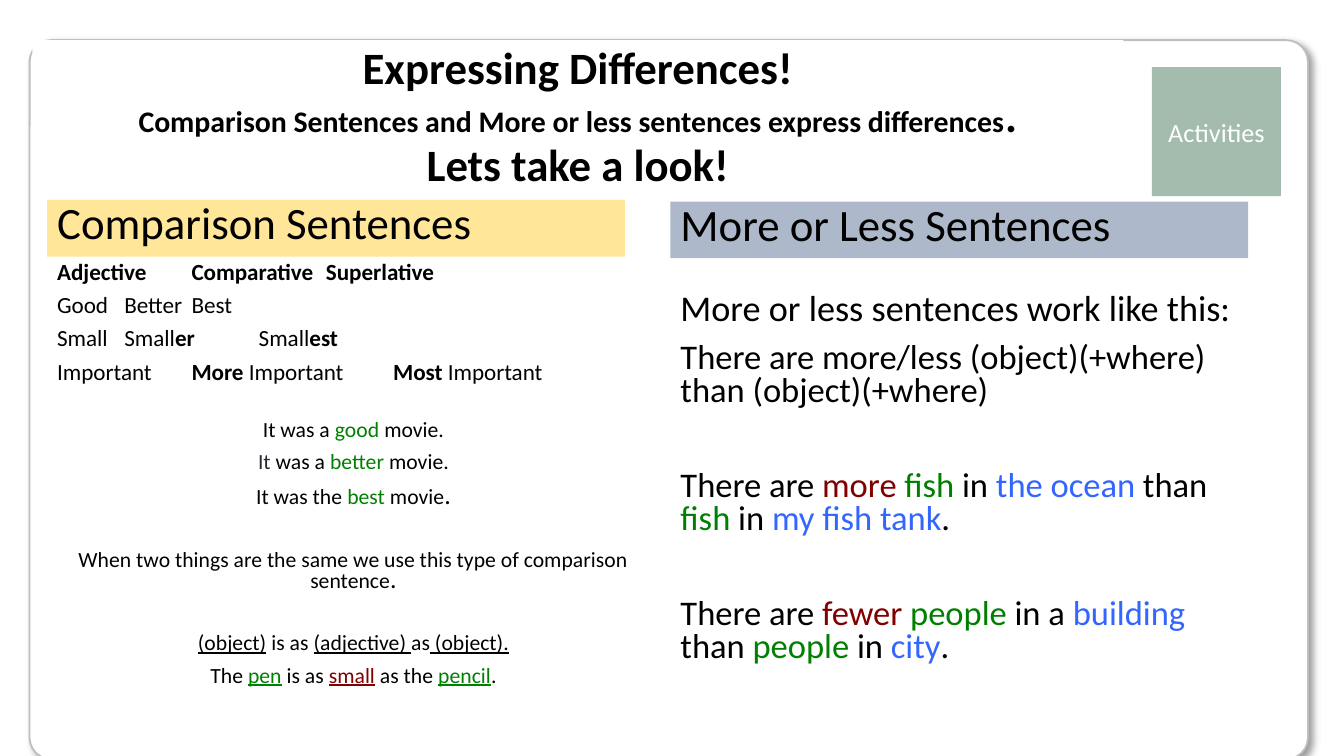
import pptx
import pptx.util
from lxml import etree
from pptx.dml.color import RGBColor
from pptx.enum.shapes import MSO_SHAPE
from pptx.enum.text import MSO_ANCHOR, MSO_AUTO_SIZE, PP_ALIGN
from pptx.oxml.ns import qn
from pptx.util import Cm, Pt

FONT = "Calibri"
BLACK, WHITE, GREEN, RED, BLUE = "000000", "FFFFFF", "008000", "800000", "3366FF"
STYLES = {
    "bold": {"bold": True},
    "title": {"bold": True, "size": 24},
    "subtitle": {"bold": True, "size": 16},
    "line": {"underline": True},
    "dot": {"size": 13.9},
    "large": {"size": 19.4},
    "navy": {"color": "292934"},
    "green": {"color": GREEN},
    "red": {"color": RED},
    "blue": {"color": BLUE},
    "green line": {"color": GREEN, "underline": True},
    "red line": {"color": RED, "underline": True},
}

# A paragraph is its spans, then any formats that differ from its box.
# A span is plain text or (text, style).
TITLE = [
    ([("Expressing Differences!\n", "title"),
      ("Comparison Sentences and More or less sentences express differences", "subtitle"),
      (".\nLets take a look!", "title")], {}),
]
WORD_STOPS = (2.19, 5.27)
ADJECTIVES = {"size": 12.4}
CENTERED = {"align": PP_ALIGN.CENTER}
COMPARISONS = [
    ([("Adjective\tComparative\tSuperlative", "bold")], ADJECTIVES | {"stops": (1.78, 4.29)}),
    (["Good\tBetter\tBest"], ADJECTIVES | {"stops": WORD_STOPS}),
    (["Small\tSmall", ("er", "bold"), "\tSmall", ("est", "bold")],
     ADJECTIVES | {"stops": WORD_STOPS}),
    (["Important\t", ("More ", "bold"), "Important\t", ("Most ", "bold"), "Important"],
     ADJECTIVES | {"stops": (2.29, 5.35)}),
    (["It was a ", ("good ", "green"), "movie."], CENTERED | {"before": 20.5}),
    ([("It", "navy"), " was a ", ("better ", "green"), "movie."], CENTERED),
    (["It was the ", ("best ", "green"), "movie", (".", "dot")], CENTERED),
    (["When two things are the same we use this type of comparison sentence", (".", "dot")],
     CENTERED | {"before": 23.5}),
    ([("(object)", "line"), " is as ", ("(adjective) ", "line"), "as", (" (object).", "line")],
     CENTERED | {"before": 23.5}),
    (["The ", ("pen", "green line"), " is as ", ("small", "red line"), " as the ",
      ("pencil", "green line"), "."], CENTERED),
]
MORE_OR_LESS = [
    ([("More or less sentences work like this:", "large")], {}),
    (["There are more/less (object)(+where) than (object)(+where)"], {}),
    (["There are ", ("more ", "red"), ("fish", "green"), " in ", ("the ocean", "blue"),
      " than ", ("fish", "green"), " in ", ("my fish tank", "blue"), "."], {"before": 33}),
    (["There are ", ("fewer ", "red"), ("people", "green"), " in a ", ("building", "blue"),
      " than ", ("people", "green"), " in ", ("city", "blue"), "."], {"before": 33}),
]

# Placeholder index: place in cm, fill, paragraphs, formats of the box
HEADING = {"size": 24, "spacing": 0.8}
PANELS = {
    0: ((0.61, 0.76, 20.62, 2.95), WHITE, TITLE,
        {"size": 24, "spacing": 0.9, "align": PP_ALIGN.CENTER, "anchor": MSO_ANCHOR.MIDDLE}),
    1: ((0.89, 3.78, 10.92, 1.07), "FFE699", [(["Comparison Sentences"], {})], HEADING),
    2: ((0.89, 4.9, 11.58, 8.48), WHITE, COMPARISONS, {"size": 11.6, "spacing": 0.7}),
    3: ((12.67, 3.81, 10.92, 1.07), "ADB9CA", [(["More or Less Sentences"], {})], HEADING),
    4: ((12.67, 5.46, 11.13, 7.49), WHITE, MORE_OR_LESS, {"size": 18.5, "spacing": 0.8}),
}
ACTIVITIES = [(["Activities"], {})]
ACTIVITIES_FORMAT = {"size": 14, "spacing": 1.0, "color": WHITE,
                     "align": PP_ALIGN.CENTER, "anchor": MSO_ANCHOR.MIDDLE}


def paint(color_format, color):
    color_format.rgb = RGBColor.from_string(color)


def fill_shape(shape, color):
    shape.fill.solid()
    paint(shape.fill.fore_color, color)


def apply(target, values):
    for name, value in values.items():
        setattr(target, name, value)


def add_span(para, text, formats):
    """Add text to a paragraph, with each newline as a line break."""
    for number, line in enumerate(text.split("\n")):
        if number:
            para.add_line_break()
        if line:
            span = para.add_run()
            span.text = line
            apply(span.font, {"name": FONT, "size": Pt(formats["size"]),
                              "bold": formats.get("bold", False),
                              "underline": formats.get("underline", False)})
            paint(span.font.color, formats.get("color", BLACK))


def clear_bullet(para, stops):
    """Remove bullet and indent, and set tab stops given in cm."""
    properties = para._p.get_or_add_pPr()
    properties.set("marL", "0")
    properties.set("indent", "0")
    etree.SubElement(properties, qn("a:buNone"))
    if stops:
        tabs = etree.SubElement(properties, qn("a:tabLst"))
        for stop in stops:
            etree.SubElement(tabs, qn("a:tab"), pos=str(int(Cm(stop))), algn="l")


def write(shape, paragraphs, box_formats):
    frame = shape.text_frame
    apply(frame, {"word_wrap": True, "auto_size": MSO_AUTO_SIZE.NONE,
                  "vertical_anchor": box_formats.get("anchor", MSO_ANCHOR.TOP),
                  "margin_left": Cm(0.19), "margin_right": Cm(0.19),
                  "margin_top": Cm(0.1), "margin_bottom": Cm(0.1)})
    for number, (spans, changes) in enumerate(paragraphs):
        formats = box_formats | changes
        para = frame.add_paragraph() if number else frame.paragraphs[0]
        clear_bullet(para, formats.get("stops", ()))
        apply(para, {"alignment": formats.get("align", PP_ALIGN.LEFT),
                     "line_spacing": formats["spacing"],
                     "space_before": Pt(formats.get("before", 7.5) if number else 0),
                     "space_after": Pt(0)})
        for span in spans:
            text, style = (span, None) if isinstance(span, str) else span
            add_span(para, text, formats | STYLES.get(style, {}))


def add_backdrop(page, kind, place, color, layer):
    """Add a filled shape behind the placeholders."""
    shape = page.shapes.add_shape(kind, *map(Cm, place))
    fill_shape(shape, color)
    shape.line.fill.background()
    shape.shadow.inherit = False
    page.shapes.element.insert(layer, shape.element)
    return shape


def add_card(page):
    card = add_backdrop(page, MSO_SHAPE.ROUNDED_RECTANGLE, (0.56, 0.76, 24.16, 13.59), WHITE, 2)
    card.adjustments[0] = 0.03
    card.line.width = Pt(1)
    card.line.fill.solid()
    paint(card.line.color, "BFBFBF")
    effects = card.element.spPr.find(qn("a:effectLst"))
    shadow = etree.SubElement(effects, qn("a:outerShdw"), blurRad=str(int(Pt(4))),
                              dist=str(int(Pt(3))), dir=str(45 * 60000),
                              algn="tl", rotWithShape="0")
    shade = etree.SubElement(shadow, qn("a:srgbClr"), val=BLACK)
    etree.SubElement(shade, qn("a:alpha"), val="40000")


def main():
    deck = pptx.Presentation()
    deck.slide_width, deck.slide_height = Cm(25.4), Cm(14.29)
    page = deck.slides.add_slide(deck.slide_layouts.get_by_name("Comparison"))
    add_card(page)
    activities = add_backdrop(page, MSO_SHAPE.RECTANGLE, (21.77, 1.27, 2.44, 2.44), "A3BCAD", 3)
    write(activities, ACTIVITIES, ACTIVITIES_FORMAT)
    for box in page.placeholders:
        place, color, paragraphs, formats = PANELS[box.placeholder_format.idx]
        apply(box, dict(zip(("left", "top", "width", "height"), map(Cm, place))))
        fill_shape(box, color)
        write(box, paragraphs, formats)
    deck.save("out.pptx")


if __name__ == "__main__":
    main()
